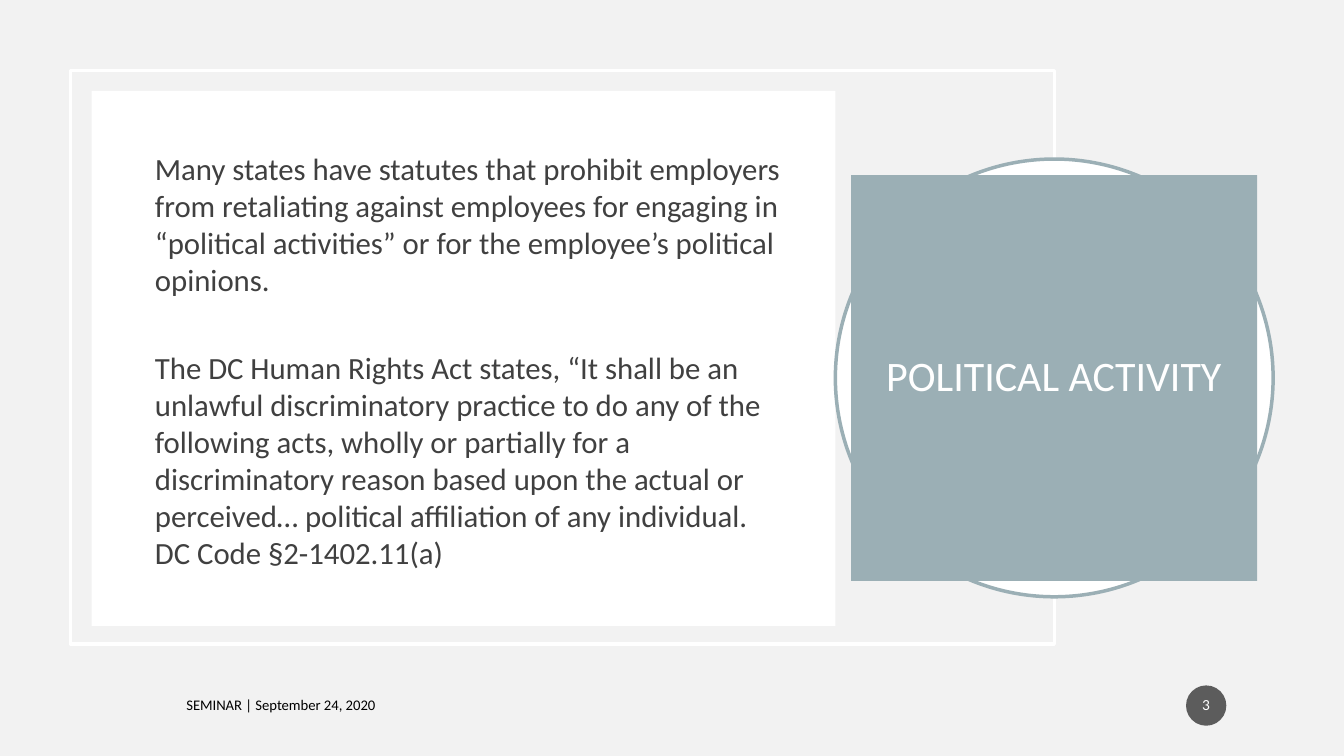
from lxml import etree
from pptx import Presentation
from pptx.dml.color import RGBColor
from pptx.enum.shapes import MSO_SHAPE
from pptx.enum.text import MSO_ANCHOR, PP_ALIGN
from pptx.oxml.ns import qn
from pptx.util import Pt

RECTANGLE, OVAL = MSO_SHAPE.RECTANGLE, MSO_SHAPE.OVAL
MIDDLE = MSO_ANCHOR.MIDDLE
LEFT, CENTER = PP_ALIGN.LEFT, PP_ALIGN.CENTER

FONT = "Calibri"
WHITE, BLACK = "FFFFFF", "000000"
PALE_GRAY, TEXT_GRAY, BADGE_GRAY = "F2F2F2", "404040", "1D1D1D"
BLUE_GRAY = "9BAFB5"

STATUTES = (
    "Many states have statutes that prohibit employers from retaliating "
    "against employees for engaging in “political activities” or for the "
    "employee’s political opinions."
)
DC_ACT = (
    "The DC Human Rights Act states, “It shall be an unlawful discriminatory "
    "practice to do any of the following acts, wholly or partially for a "
    "discriminatory reason based upon the actual or perceived… political "
    "affiliation of any individual.\vDC Code §2-1402.11(a)"
)


def color(hex_string):
    return RGBColor.from_string(hex_string)


def add_panel(slide, kind, box, fill=None, line=None):
    panel = slide.shapes.add_shape(kind, *map(Pt, box))
    panel.shadow.inherit = False
    if fill:
        panel.fill.solid()
        panel.fill.fore_color.rgb = color(fill)
    else:
        panel.fill.background()
    if line:
        panel.line.color.rgb = color(line)
        panel.line.width = Pt(2.5)
    else:
        panel.line.fill.background()
    return panel


def set_opacity(panel, percent):
    fill_color = panel.fill._xPr.find(qn("a:solidFill"))[0]
    etree.SubElement(fill_color, qn("a:alpha"), val=str(percent * 1000))


def write(shape, paragraphs, size, ink, align=LEFT, margins=(7.2, 3.6),
          gap=0, spacing=1.0):
    frame = shape.text_frame
    frame.word_wrap = True
    frame.vertical_anchor = MIDDLE
    frame.margin_left = frame.margin_right = Pt(margins[0])
    frame.margin_top = frame.margin_bottom = Pt(margins[1])
    frame.text = "\n".join(paragraphs)
    for index, paragraph in enumerate(frame.paragraphs):
        paragraph.alignment = align
        paragraph.line_spacing = spacing
        paragraph.space_before = Pt(gap if index else 0)
        paragraph.font.size = Pt(size)
        for run in paragraph.runs:
            run.font.name = FONT
            run.font.size = Pt(size)
            run.font.color.rgb = color(ink)


def add_text(slide, box, paragraphs, size, ink, gap=0):
    text = slide.shapes.add_textbox(*map(Pt, box))
    write(text, paragraphs, size, ink, gap=gap)


def main():
    deck = Presentation()
    deck.slide_width, deck.slide_height = Pt(960), Pt(540)
    slide = deck.slides.add_slide(deck.slide_layouts[6])
    slide.background.fill.solid()
    slide.background.fill.fore_color.rgb = color(PALE_GRAY)

    # Outer frame and white text panel
    add_panel(slide, RECTANGLE, (50.4, 50.4, 702.7, 409.7), line=WHITE)
    add_panel(slide, RECTANGLE, (65.5, 65, 531.2, 382.1), fill=WHITE)

    # Body text
    add_text(slide, (103.6, 101.2, 471, 312.5), [STATUTES, DC_ACT],
             22, TEXT_GRAY, gap=36.4)

    # Ring with the title block on top
    add_panel(slide, OVAL, (596.7, 113.6, 312.7, 312.7), WHITE, BLUE_GRAY)
    title = add_panel(slide, RECTANGLE, (607.9, 125, 290, 290), BLUE_GRAY)
    write(title, ["POLITICAL ACTIVITY"], 30, WHITE, CENTER, (14.4, 14.4),
          spacing=0.9)

    # Footer and page badge
    add_text(slide, (126, 491, 464.4, 25.2), ["SEMINAR | September 24, 2020"],
             10.5, BLACK)
    badge = add_panel(slide, OVAL, (847.2, 489.6, 28.8, 28.8), BADGE_GRAY)
    set_opacity(badge, 70)
    write(badge, ["3"], 11, WHITE, CENTER, (1.4, 3.6), spacing=0.9)

    deck.save("out.pptx")


if __name__ == "__main__":
    main()
